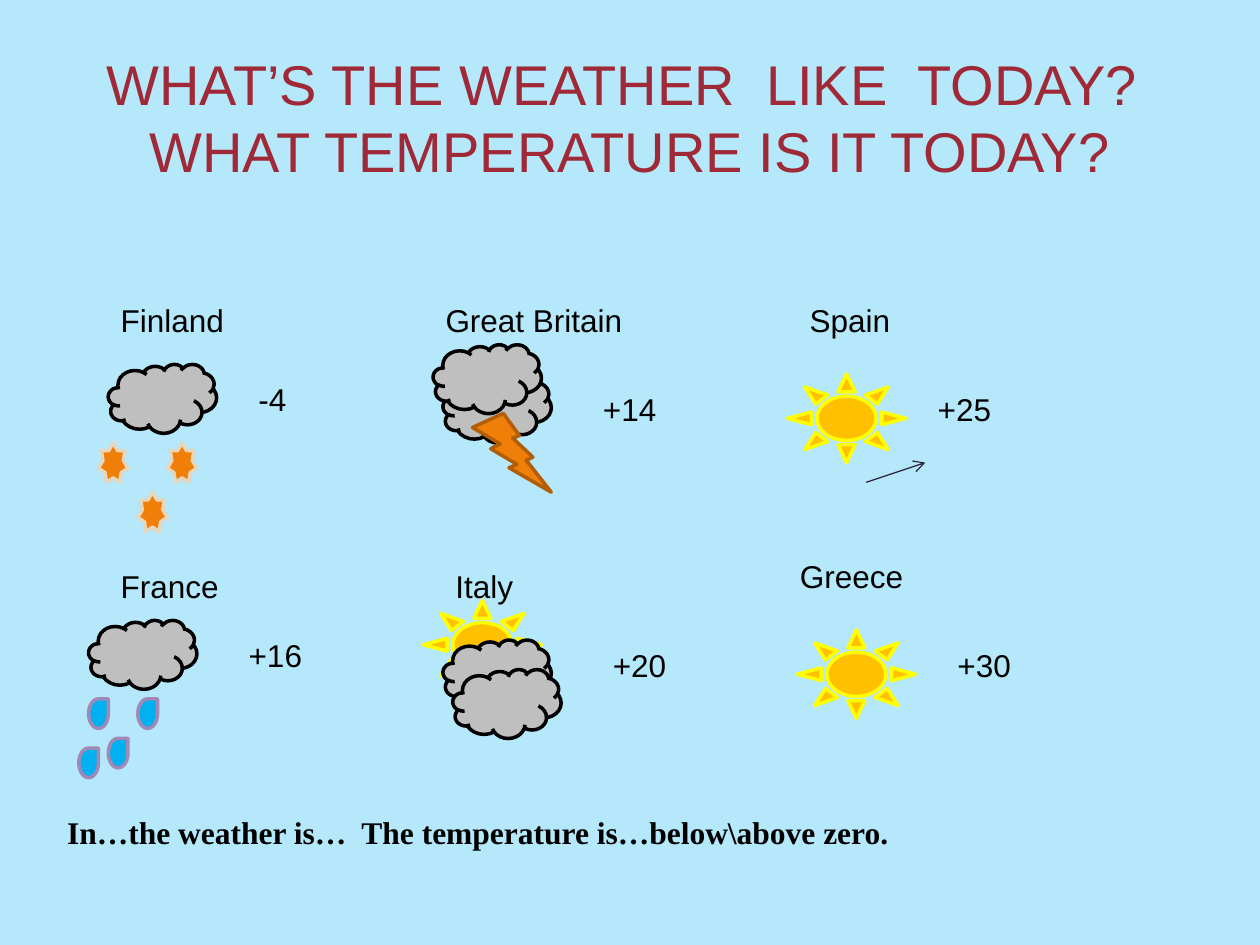
from dataclasses import dataclass

from lxml import etree
from pptx import Presentation
from pptx import util as u
from pptx.dml.color import RGBColor
from pptx.enum import shapes, text
from pptx.oxml.ns import qn

COLUMNS, ROWS = 128, 96
SHAPE = shapes.MSO_SHAPE


@dataclass(frozen=True)
class Theme:
    """Colours, fonts and sizes of the slide."""
    background: str = "B5E8FB"
    title: str = "9F2936"
    ink: str = "000000"
    arrow: str = "30243C"
    font: str = "Arial"
    sentence_font: str = "Times New Roman"
    title_size: int = 32
    body_size: int = 18
    outline: float = 2
    arrow_width: float = 0.75


THEME = Theme()

SYMBOLS = {
    "cloud": (SHAPE.CLOUD, 11, 7, "BFBFBF", "000000"),
    "sun": (SHAPE.SUN, 12, 9, "FFC000", "FFFF00"),
    "drop": (SHAPE.TEAR, 2, 3, "00B0F0", "A088B7"),
    "flake": (SHAPE.STAR_7_POINT, 3, 4, "F07F09", "E6D6BD"),
    "bolt": (SHAPE.LIGHTNING_BOLT, 8, 8, "F07F09", "B25E07"),
}

COUNTRIES = [
    ((8, 30), ("Finland", 3, 0, 15), ("-4", 17, 8, 8),
     [("cloud", 3, 7), ("flake", 9, 15), ("flake", 2, 15), ("flake", 6, 20)]),
    ((43, 30), ("Great Britain", 1, 0, 26), ("+14", 17, 9, 8),
     [("cloud", 2, 8), ("cloud", 1, 5), ("bolt", 5, 12)]),
    ((80, 30), ("Spain", 1, 0, 14), ("+25", 14, 9, 10), [("sun", 0, 8)]),
    ((8, 57), ("France", 3, 0, 14), ("+16", 16, 7, 8),
     [("cloud", 1, 6), ("drop", 6, 14), ("drop", 1, 14), ("drop", 0, 19), ("drop", 3, 18)]),
    ((43, 57), ("Italy", 2, 0, 12), ("+20", 18, 8, 8),
     [("sun", 0, 4), ("cloud", 2, 8), ("cloud", 3, 11)]),
    ((80, 56), ("Greece", 0, 0, 14), ("+30", 16, 9, 11), [("sun", 1, 8)]),
]


def grid(columns, rows):
    """Turn grid columns and rows into slide lengths."""
    return u.Emu(round(u.Inches(10) * columns / COLUMNS)), u.Emu(round(u.Inches(7.5) * rows / ROWS))


def style_font(font, name, size, color, bold=False):
    """Give a font its face, size, colour and weight."""
    font.name, font.size, font.bold = name, u.Pt(size), bold
    font.color.rgb = RGBColor.from_string(color)


def add_title(slide, box, wording):
    """Place and format the title placeholder."""
    title = slide.shapes.title
    title.left, title.top = grid(*box[:2])
    title.width, title.height = grid(*box[2:])
    frame = title.text_frame
    frame.text = wording
    frame.vertical_anchor = text.MSO_ANCHOR.MIDDLE
    paragraph = frame.paragraphs[0]
    paragraph.alignment = text.PP_ALIGN.CENTER
    style_font(paragraph.font, THEME.font, THEME.title_size, THEME.title)


def add_label(slide, wording, column, row, width, font=THEME.font, bold=False):
    """Add one line of black text and return its frame."""
    label = slide.shapes.add_textbox(*grid(column, row), *grid(width, 5.15))
    frame = label.text_frame
    frame.word_wrap = True
    frame.text = wording
    style_font(frame.paragraphs[0].font, font, THEME.body_size, THEME.ink, bold)
    return frame


def add_symbol(slide, kind, column, row):
    """Draw one weather symbol at a grid point."""
    preset, width, height, fill, line = SYMBOLS[kind]
    symbol = slide.shapes.add_shape(preset, *grid(column, row), *grid(width, height))
    symbol.shadow.inherit = False
    symbol.fill.solid()
    symbol.fill.fore_color.rgb = RGBColor.from_string(fill)
    symbol.line.color.rgb = RGBColor.from_string(line)
    symbol.line.width = u.Pt(THEME.outline)


def add_country(slide, origin, name, temperature, symbols):
    """Place a country's name, temperature and symbols relative to its origin."""
    left, top = origin
    for wording, column, row, width in (name, temperature):
        add_label(slide, wording, left + column, top + row, width)
    for kind, column, row in symbols:
        add_symbol(slide, kind, left + column, top + row)


def add_arrow(slide, start, end):
    """Draw a thin arrow between two grid points."""
    arrow = slide.shapes.add_connector(shapes.MSO_CONNECTOR.STRAIGHT, *grid(*start), *grid(*end))
    arrow.line.color.rgb = RGBColor.from_string(THEME.arrow)
    arrow.line.width = u.Pt(THEME.arrow_width)
    etree.SubElement(arrow.line._get_or_add_ln(), qn("a:tailEnd"), type="arrow")
    etree.SubElement(arrow._element.spPr, qn("a:effectLst"))


def main():
    """Build the weather slide and save it."""
    presentation = Presentation()
    presentation.slide_width, presentation.slide_height = u.Inches(10), u.Inches(7.5)
    slide = presentation.slides.add_slide(presentation.slide_layouts[5])
    slide.background.fill.solid()
    slide.background.fill.fore_color.rgb = RGBColor.from_string(THEME.background)
    add_title(slide, (6.4, 3.84, 115.2, 16),
              "WHAT’S THE WEATHER  LIKE  TODAY?  WHAT TEMPERATURE IS IT TODAY?")
    for country in COUNTRIES:
        add_country(slide, *country)
    add_arrow(slide, (88, 49), (94, 47))
    sentence = add_label(slide, "In…the weather is…  The temperature is…below\\above zero.",
                         4, 82, 118, THEME.sentence_font, True)
    sentence.margin_left = u.Inches(0.22)
    presentation.save("out.pptx")


if __name__ == "__main__":
    main()
